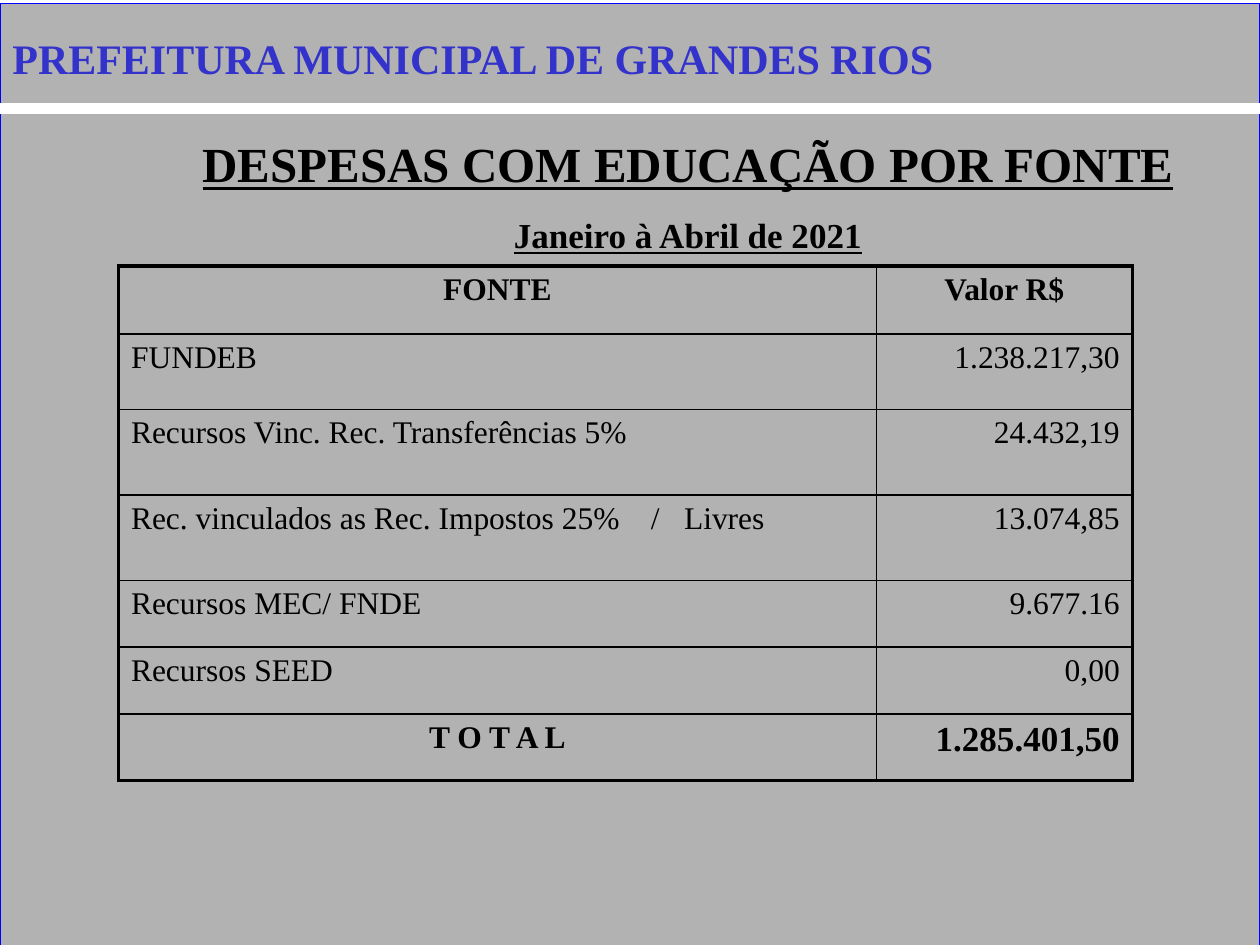
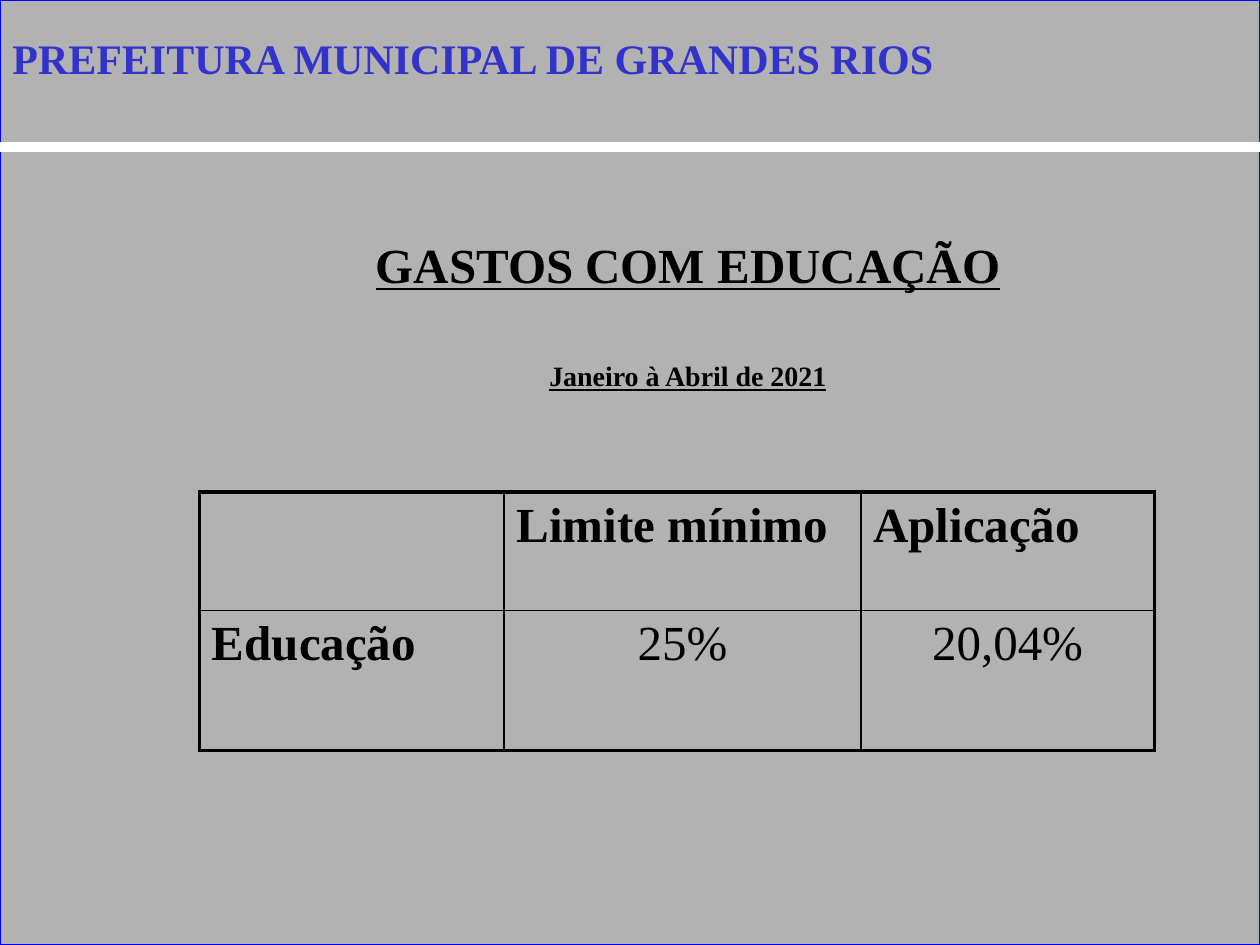
from lxml import etree
from pptx import Presentation
from pptx.dml.color import RGBColor
from pptx.enum.shapes import MSO_CONNECTOR, MSO_SHAPE
from pptx.enum.text import PP_ALIGN
from pptx.oxml.ns import qn
from pptx.util import Pt

LEFT, CENTER, RIGHT = PP_ALIGN.LEFT, PP_ALIGN.CENTER, PP_ALIGN.RIGHT
RECTANGLE, STRAIGHT = MSO_SHAPE.RECTANGLE, MSO_CONNECTOR.STRAIGHT

GRAY = RGBColor(0xB2, 0xB2, 0xB2)
BLUE = RGBColor(0x00, 0x00, 0xFF)
WHITE = RGBColor(0xFF, 0xFF, 0xFF)
BLACK = RGBColor(0x00, 0x00, 0x00)
TITLE_BLUE = RGBColor(0x33, 0x33, 0xCC)
SHADOW_GRAY = RGBColor(0x80, 0x80, 0x80)

FONT = "Times New Roman"
WIDTH, HEIGHT = 720, 540
OUTER, INNER = 2.25, 1
ENTITY = "PREFEITURA MUNICIPAL DE GRANDES RIOS"
PERIOD = "Janeiro à Abril de 2021"


class ReportDeck:
    """Holds the shared style, the deck and the current page."""

    def __init__(self):
        self.deck = Presentation()
        self.deck.slide_width, self.deck.slide_height = Pt(WIDTH), Pt(HEIGHT)
        self.page = None

    def add_page(self, panel_top, rule_y):
        self.page = self.deck.slides.add_slide(self.deck.slide_layouts[6])
        self.panel(panel_top)
        self.rule(rule_y)
        title = self.text_box(0, 15.1, 683.3, 36)
        span = self.add_text(title.paragraphs[0], ENTITY, size=24, color=TITLE_BLUE, bold=True)
        self.shade(span)

    def panel(self, top):
        panel = self.page.shapes.add_shape(RECTANGLE, 0, Pt(top), Pt(WIDTH), Pt(HEIGHT))
        panel.shadow.inherit = False
        panel.fill.solid()
        panel.fill.fore_color.rgb = GRAY
        panel.line.color.rgb = BLUE
        panel.line.width = Pt(0.75)

    def rule(self, y):
        rule = self.page.shapes.add_connector(STRAIGHT, 0, Pt(y), Pt(WIDTH), Pt(y))
        rule.line.color.rgb = WHITE
        rule.line.width = Pt(6)
        etree.SubElement(rule._element.spPr, qn("a:effectLst"))

    def text_box(self, *bounds):
        box = self.page.shapes.add_textbox(*map(Pt, bounds))
        box.text_frame.word_wrap = True
        return box.text_frame

    def add_text(self, para, text, size, align=LEFT, color=BLACK, **formats):
        para.alignment = align
        span = para.add_run()
        span.text = text
        span.font.color.rgb = color
        for name, value in {"name": FONT, "size": Pt(size), **formats}.items():
            setattr(span.font, name, value)
        return span

    def shade(self, span):
        effects = etree.Element(qn("a:effectLst"))
        shadow = etree.SubElement(effects, qn("a:outerShdw"), dist=str(Pt(2.8)), dir="2700000")
        etree.SubElement(shadow, qn("a:srgbClr"), val=str(SHADOW_GRAY))
        span.font._element.find(qn("a:latin")).addprevious(effects)

    def heading(self, top, height, title, period_size, gap=0):
        frame = self.text_box(102.2, top, 581.8, height)
        first, second = frame.paragraphs[0], frame.add_paragraph()
        second.space_before = Pt(gap)
        for para, text, size in ((first, title, 28), (second, PERIOD, period_size)):
            para.line_spacing = 1.5
            self.add_text(para, text, size, CENTER, bold=True, underline=True)

    def table(self, left, top, widths, heights, rows):
        frame = self.page.shapes.add_table(
            len(heights), len(widths), Pt(left), Pt(top), Pt(sum(widths)), Pt(sum(heights)))
        table = frame.table
        table.first_row = table.horz_banding = False
        for column, width in zip(table.columns, widths):
            column.width = Pt(width)
        for row, height in zip(table.rows, heights):
            row.height = Pt(height)
        last_row, last_column = len(heights) - 1, len(widths) - 1
        for i, row in enumerate(rows):
            for j, (text, size, align, bold) in enumerate(row):
                cell = table.cell(i, j)
                cell.fill.background()
                edges = {"lnL": j == 0, "lnR": j == last_column, "lnT": i == 0, "lnB": i == last_row}
                self.borders(cell, edges)
                para = cell.text_frame.paragraphs[0]
                if text:
                    self.add_text(para, text, size, align, bold=bold)
        return table

    def borders(self, cell, edges):
        properties = cell._tc.get_or_add_tcPr()
        for index, (tag, is_outer) in enumerate(edges.items()):
            line = etree.Element(qn(f"a:{tag}"), w=str(Pt(OUTER if is_outer else INNER)))
            fill = etree.SubElement(line, qn("a:solidFill"))
            etree.SubElement(fill, qn("a:srgbClr"), val=str(BLACK))
            properties.insert(index, line)

    def tab_stops(self, para, *positions):
        stops = etree.SubElement(para._p.get_or_add_pPr(), qn("a:tabLst"))
        for position in positions:
            etree.SubElement(stops, qn("a:tab"), pos=str(Pt(position)), algn="l")


def add_expenses(report):
    report.add_page(panel_top=2, rule_y=61.9)
    report.heading(56.2, 396.7, "DESPESAS COM EDUCAÇÃO POR FONTE", period_size=20)
    sources = [
        ("FUNDEB", "1.238.217,30"),
        ("Recursos Vinc. Rec. Transferências 5%", "24.432,19"),
        ("Rec. vinculados as Rec. Impostos 25%\t/\tLivres", "13.074,85"),
        ("Recursos MEC/ FNDE", "9.677.16"),
        ("Recursos SEED", "0,00"),
    ]
    rows = [[("FONTE", 18, CENTER, True), ("Valor R$", 18, CENTER, True)]]
    rows += [[(name, 18, LEFT, False), (value, 18, RIGHT, False)] for name, value in sources]
    rows.append([("T O T A L", 18, CENTER, True), ("1.285.401,50", 20, RIGHT, True)])
    heights = [38.9, 43.2, 48.8, 48.8, 38.2, 38.2, 38.2]
    table = report.table(67.7, 151.9, [433.1, 146.3], heights, rows)
    report.tab_stops(table.cell(3, 0).text_frame.paragraphs[0], 297, 316)


def add_spending(report):
    report.add_page(panel_top=0, rule_y=84.1)
    report.heading(113.8, 450.7, "GASTOS COM EDUCAÇÃO", period_size=16, gap=27.6)
    rows = [
        [("", 28, LEFT, True), ("Limite mínimo", 28, LEFT, True), ("Aplicação", 28, LEFT, True)],
        [("Educação", 28, LEFT, True), ("25%", 28, CENTER, False), ("20,04%", 28, CENTER, False)],
    ]
    report.table(113.9, 281.2, [174.2, 203.8, 167.8], [67.7, 79.9], rows)


def main():
    report = ReportDeck()
    add_expenses(report)
    add_spending(report)
    report.deck.save("out.pptx")


if __name__ == "__main__":
    main()
